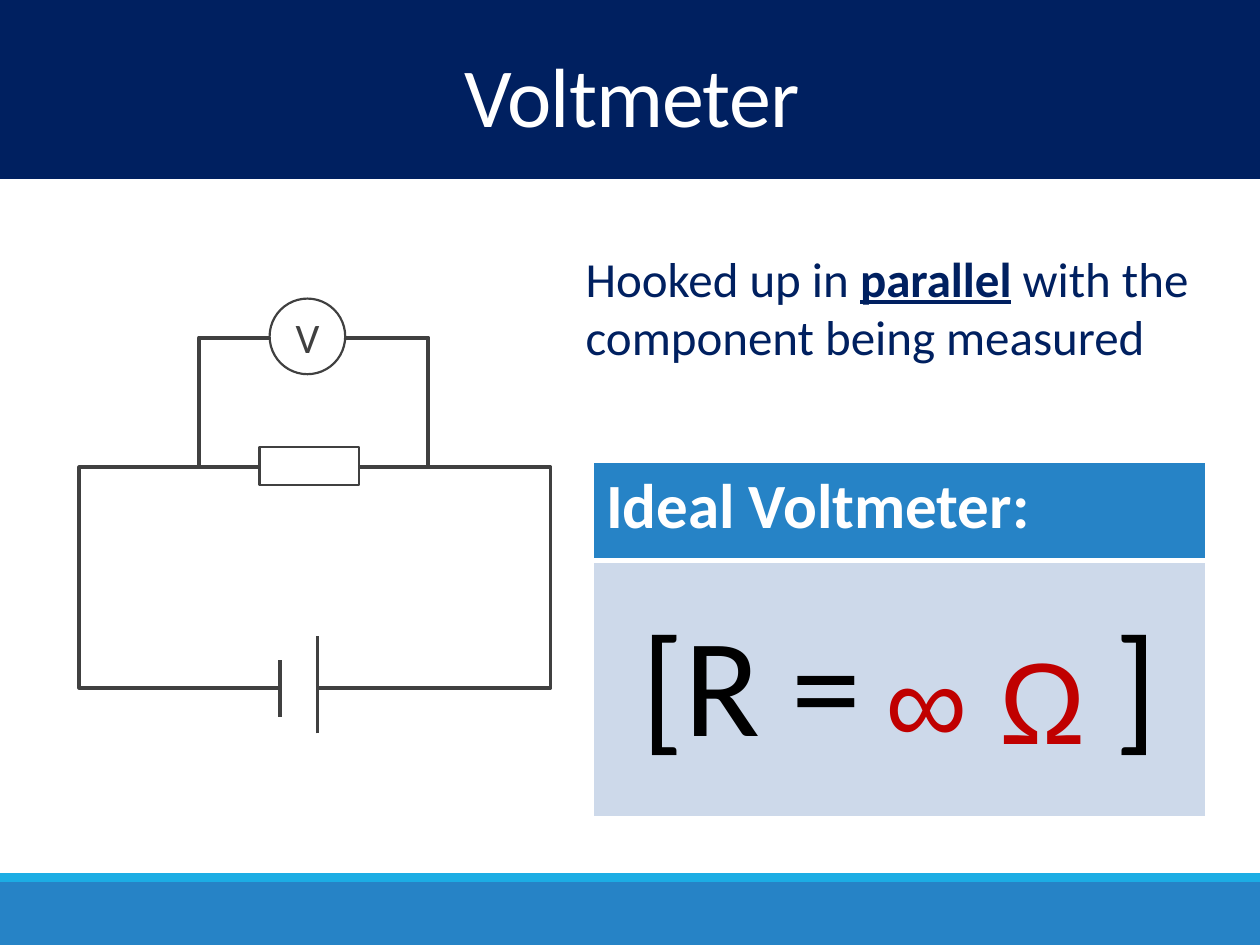
import pptx
import pptx.dml.color
import pptx.enum.shapes
import pptx.enum.text
import pptx.oxml
import pptx.oxml.ns
import pptx.util
from pptx.dml.color import RGBColor
from pptx.enum.shapes import MSO_SHAPE
from pptx.enum.text import MSO_ANCHOR, PP_ALIGN
from pptx.util import Inches

NAVY = RGBColor(0x00, 0x20, 0x60)
BLUE = RGBColor(0x26, 0x83, 0xC6)
CYAN = RGBColor(0x1C, 0xAD, 0xE4)
PALE_BLUE = RGBColor(0xCD, 0xD9, 0xEA)
GRAY = RGBColor(0x40, 0x40, 0x40)
RED = RGBColor(0xC0, 0x00, 0x00)
WHITE = RGBColor(0xFF, 0xFF, 0xFF)
BLACK = RGBColor(0x00, 0x00, 0x00)

WIRE = 2.25
OUTLINE = 1.25


class SlideBuilder:
    """Holds the slide being drawn and its shared style."""

    font_name = "Calibri"

    def __init__(self, slide):
        self.slide = slide

    def style(self, paragraph, size, color, align=None, font=None, bold=None):
        paragraph.font.name = font or self.font_name
        paragraph.font.size = pptx.util.Pt(size)
        paragraph.font.color.rgb = color
        paragraph.font.bold = bold
        paragraph.alignment = align

    def shape(self, box, fill=None, line_width=None, kind=MSO_SHAPE.RECTANGLE):
        shape = self.slide.shapes.add_shape(kind, *map(Inches, box))
        shape.shadow.inherit = False
        if fill is None:
            shape.fill.background()
        else:
            shape.fill.solid()
            shape.fill.fore_color.rgb = fill
        if line_width is None:
            shape.line.fill.background()
        else:
            shape.line.color.rgb = GRAY
            shape.line.width = pptx.util.Pt(line_width)
        return shape

    def vertical_line(self, x, top, bottom):
        line = self.slide.shapes.add_connector(
            pptx.enum.shapes.MSO_CONNECTOR.STRAIGHT,
            Inches(x), Inches(bottom), Inches(x), Inches(top))
        line.line.color.rgb = GRAY
        line.line.width = pptx.util.Pt(WIRE)
        line._element.spPr.append(pptx.oxml.parse_xml(
            f"<a:effectLst {pptx.oxml.ns.nsdecls('a')}/>"))

    def text(self, box, runs, size, color, wrap=True, **style):
        """Add a text box and return its paragraph."""
        frame = self.slide.shapes.add_textbox(*map(Inches, box)).text_frame
        frame.word_wrap = wrap
        paragraph = frame.paragraphs[0]
        for words in runs:
            paragraph.add_run().text = words
        self.style(paragraph, size, color, **style)
        return paragraph

    def table(self, box, row_heights):
        left, top, width, height = map(Inches, box)
        table = self.slide.shapes.add_table(
            len(row_heights), 1, left, top, width, height).table
        for row, row_height in zip(table.rows, row_heights):
            row.height = Inches(row_height)
        return table

    def cell(self, cell, fill, top=1, bottom=1):
        """Fill a cell, give it white borders and return its paragraph."""
        cell.fill.solid()
        cell.fill.fore_color.rgb = fill
        properties = cell._tc.get_or_add_tcPr()
        borders = {"lnL": 1, "lnR": 1, "lnT": top, "lnB": bottom}
        for index, (tag, points) in enumerate(borders.items()):
            properties.insert(index, pptx.oxml.parse_xml(
                f"<a:{tag} {pptx.oxml.ns.nsdecls('a')} w='{points * 12700}'>"
                f"<a:solidFill><a:srgbClr val='{WHITE}'/></a:solidFill></a:{tag}>"))
        return cell.text_frame.paragraphs[0]


def set_spacing(run, points):
    run.font._element.set("spc", str(round(points * 100)))


def draw_bands(builder):
    builder.shape((0, 7, 10, 0.5), BLUE)
    builder.shape((0, 6.93, 10, 0.07), CYAN)
    builder.shape((0, 0, 10, 1.42), NAVY)
    title = builder.text((0.03, 0.42, 9.97, 0.84), ["Voltmeter"], 48, WHITE,
                         align=PP_ALIGN.CENTER)
    title.line_spacing = 0.85
    set_spacing(title.runs[0], -0.5)


def draw_circuit(builder):
    builder.shape((0.63, 3.71, 3.74, 1.75), line_width=WIRE)
    builder.shape((2.22, 5.34, 0.3, 0.26), WHITE)
    builder.vertical_line(2.52, 5.05, 5.82)
    builder.vertical_line(2.22, 5.24, 5.69)
    builder.shape((1.58, 2.68, 1.82, 1.03), line_width=WIRE)
    meter = builder.shape((2.14, 2.37, 0.6, 0.6), WHITE, OUTLINE, MSO_SHAPE.OVAL)
    meter.text_frame.text = "V"
    meter.text_frame.vertical_anchor = MSO_ANCHOR.MIDDLE
    builder.style(meter.text_frame.paragraphs[0], 24, GRAY, PP_ALIGN.CENTER)
    builder.shape((2.06, 3.55, 0.79, 0.3), WHITE, OUTLINE)


def draw_explanation(builder):
    hookup = builder.text(
        (4.55, 1.92, 5.02, 1.04),
        ["Hooked up in ", "parallel", " with the component being measured"],
        28, NAVY)
    hookup.runs[1].font.bold = True
    hookup.runs[1].font.underline = True

    table = builder.table((4.71, 3.67, 4.86, 2.81), (0.78, 2.03))
    heading = builder.cell(table.cell(0, 0), BLUE, bottom=3)
    heading.add_run().text = "Ideal Voltmeter:"
    builder.style(heading, 36, WHITE, bold=True)

    formula = builder.cell(table.cell(1, 0), PALE_BLUE, top=3)
    for words in ("[R =", " ", "]"):
        formula.add_run().text = words
    set_spacing(formula.runs[1], 126.5)
    builder.style(formula, 80, BLACK, PP_ALIGN.CENTER, bold=False)
    table.cell(1, 0).vertical_anchor = MSO_ANCHOR.MIDDLE

    builder.text((6.93, 4.94, 1.91, 1.21), ["∞ Ω"], 66, RED,
                 wrap=False, font="Arial")


def main():
    presentation = pptx.Presentation()
    presentation.slide_width = Inches(10)
    presentation.slide_height = Inches(7.5)
    slide = presentation.slides.add_slide(presentation.slide_layouts[6])
    builder = SlideBuilder(slide)
    draw_bands(builder)
    draw_circuit(builder)
    draw_explanation(builder)
    presentation.save("out.pptx")


if __name__ == "__main__":
    main()
